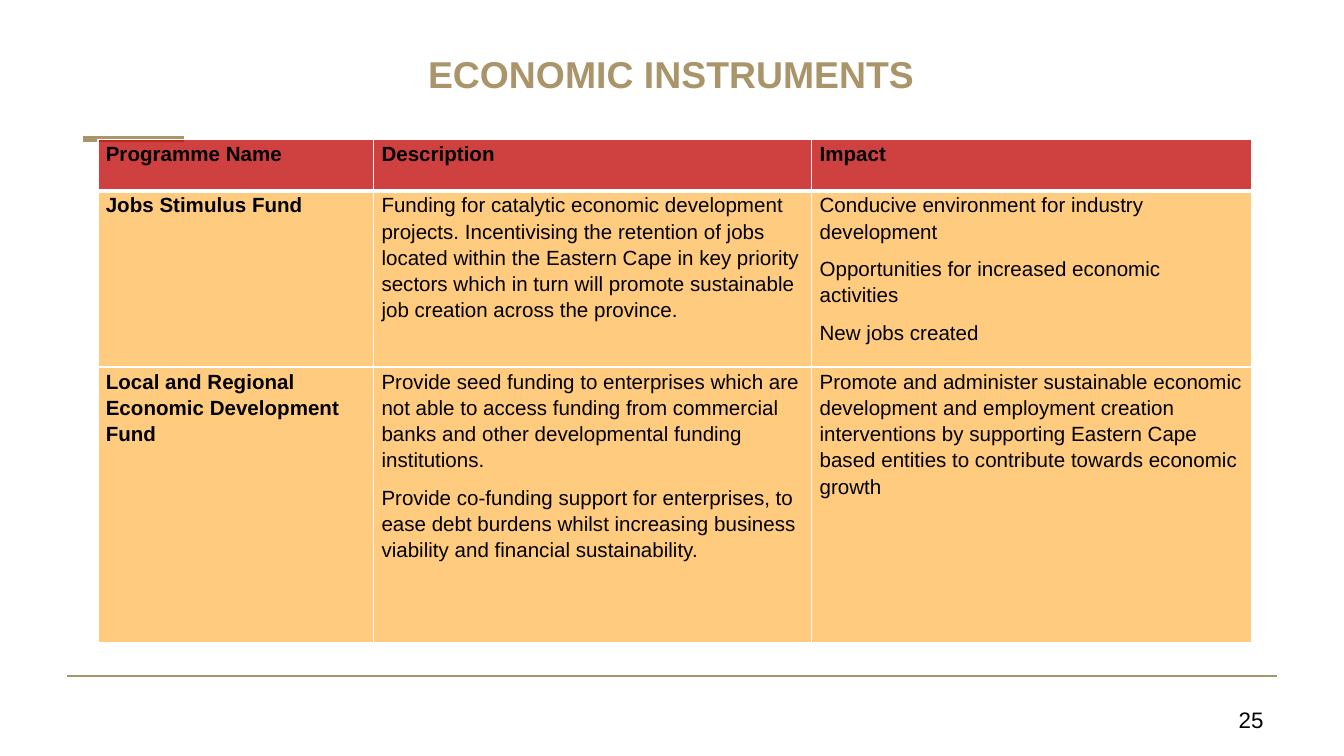
from dataclasses import dataclass

import pptx
import pptx.dml.color
import pptx.enum.shapes
import pptx.enum.text
import pptx.oxml
import pptx.oxml.ns
import pptx.util

Cm = pptx.util.Cm
Pt = pptx.util.Pt
ALIGN = pptx.enum.text.PP_ALIGN


@dataclass(frozen=True)
class Theme:
    """Colours, font and type sizes of the slide."""
    font: str = "Arial"
    gold: str = "AA956B"
    text: str = "000000"
    border: str = "FFFFFF"
    header: str = "C00000"
    body: str = "FF9900"
    header_opacity: int = 75
    body_opacity: int = 50
    title_size: int = 20
    table_size: int = 11
    number_size: int = 12


@dataclass(frozen=True)
class Box:
    """A region in centimetres."""
    left: float
    top: float
    width: float
    height: float

    def lengths(self):
        """Return the region as four lengths."""
        return [Cm(n) for n in (self.left, self.top, self.width, self.height)]


THEME = Theme()
COLUMN_WIDTHS = (5.21, 8.28, 8.31)
ROW_HEIGHTS = (0.97, 3.33, 5.21)
PROGRAMMES = [
    [["Programme Name"], ["Description"], ["Impact"]],
    [
        ["Jobs Stimulus Fund"],
        ["Funding for catalytic economic development projects. Incentivising the "
         "retention of jobs located within the Eastern Cape in key priority sectors "
         "which in turn will promote sustainable job creation across the province."],
        ["Conducive environment for industry development",
         "Opportunities for increased economic activities",
         "New jobs created"],
    ],
    [
        ["Local and Regional Economic Development Fund"],
        ["Provide seed funding to enterprises which are not able to access funding "
         "from commercial banks and other developmental funding institutions.",
         "Provide co-funding support for enterprises, to ease debt burdens whilst "
         "increasing business viability and financial sustainability."],
        ["Promote and administer sustainable economic development and employment "
         "creation interventions by supporting Eastern Cape based entities to "
         "contribute towards economic growth"],
    ],
]


def write_text(frame, paragraphs, size, color=THEME.text, bold=False,
               align=ALIGN.LEFT, spacing=1.0, after=0):
    """Fill a text frame with equally formatted paragraphs."""
    frame.word_wrap = True
    for index, words in enumerate(paragraphs):
        paragraph = frame.paragraphs[0] if index == 0 else frame.add_paragraph()
        paragraph.alignment = align
        paragraph.line_spacing = spacing
        paragraph.space_before = Pt(0)
        paragraph.space_after = Pt(after)
        run = paragraph.add_run()
        run.text = words
        run.font.name = THEME.font
        run.font.size = Pt(size)
        run.font.bold = bold
        run.font.color.rgb = pptx.dml.color.RGBColor.from_string(color)


def add_rule(slide, box, weight):
    """Draw a gold rule along the top of the box."""
    left, top, width, _ = box.lengths()
    rule = slide.shapes.add_connector(
        pptx.enum.shapes.MSO_CONNECTOR.STRAIGHT, left, top, left + width, top)
    rule.line.color.rgb = pptx.dml.color.RGBColor.from_string(THEME.gold)
    rule.line.width = Pt(weight)
    properties = rule._element.spPr
    properties.append(properties.makeelement(pptx.oxml.ns.qn("a:effectLst"), {}))


def add_title(slide, box, words):
    """Place the title placeholder in the box."""
    title = slide.shapes.title
    title.left, title.top, title.width, title.height = box.lengths()
    title.text_frame.vertical_anchor = pptx.enum.text.MSO_ANCHOR.MIDDLE
    write_text(title.text_frame, [words], THEME.title_size, color=THEME.gold,
               bold=True, align=ALIGN.CENTER)


def style_cell(cell, color, opacity, top, bottom):
    """Give a cell its borders and translucent fill."""
    properties = cell._tc.get_or_add_tcPr()
    for side, weight in (("L", 1), ("R", 1), ("T", top), ("B", bottom)):
        properties.append(pptx.oxml.parse_xml(
            f'<a:ln{side} {pptx.oxml.ns.nsdecls("a")} w="{Pt(weight)}">'
            f'<a:solidFill><a:srgbClr val="{THEME.border}"/></a:solidFill>'
            f'</a:ln{side}>'))
    cell.fill.solid()
    cell.fill.fore_color.rgb = pptx.dml.color.RGBColor.from_string(color)
    tint = properties.find(".//" + pptx.oxml.ns.qn("a:solidFill") + "[last()]")
    tint = properties.findall(pptx.oxml.ns.qn("a:solidFill"))[0][0]
    tint.append(tint.makeelement(
        pptx.oxml.ns.qn("a:alpha"), {"val": str(opacity * 1000)}))


def add_programmes(slide, box, rows):
    """Build the programme table in the box."""
    table = slide.shapes.add_table(
        len(rows), len(COLUMN_WIDTHS), *box.lengths()).table
    table.horz_banding = False
    for column, width in zip(table.columns, COLUMN_WIDTHS):
        column.width = Cm(box.width * width / sum(COLUMN_WIDTHS))
    for row, height in zip(table.rows, ROW_HEIGHTS):
        row.height = Cm(box.height * height / sum(ROW_HEIGHTS))
    for r, entries in enumerate(rows):
        for c, paragraphs in enumerate(entries):
            cell = table.cell(r, c)
            cell.margin_left = cell.margin_right = Cm(0.15)
            cell.margin_top = cell.margin_bottom = Cm(0)
            if r == 0:
                style_cell(cell, THEME.header, THEME.header_opacity, 1, 3)
            else:
                style_cell(cell, THEME.body, THEME.body_opacity, 3 if r == 1 else 1, 1)
            write_text(cell.text_frame, paragraphs, THEME.table_size,
                       bold=r == 0 or c == 0, spacing=1.15, after=6)


def add_page_number(slide, box, number):
    """Place the page number at the right of the box."""
    frame = slide.shapes.add_textbox(*box.lengths()).text_frame
    frame.vertical_anchor = pptx.enum.text.MSO_ANCHOR.MIDDLE
    write_text(frame, [number], THEME.number_size, align=ALIGN.RIGHT)


def main():
    """Build and save the slide."""
    presentation = pptx.Presentation()
    presentation.slide_width = Cm(25.4)
    presentation.slide_height = Cm(14.29)
    slide = presentation.slides.add_slide(presentation.slide_layouts[5])
    add_rule(slide, Box(1.57, 2.62, 1.91, 0), 3.25)
    add_rule(slide, Box(1.27, 12.78, 22.86, 0), 1)
    add_title(slide, Box(4.11, 0.58, 17.15, 1.63), "ECONOMIC INSTRUMENTS")
    add_programmes(slide, Box(1.85, 2.64, 21.8, 9.51), PROGRAMMES)
    add_page_number(slide, Box(18.21, 13.23, 5.92, 0.76), "25")
    presentation.save("out.pptx")


if __name__ == "__main__":
    main()
